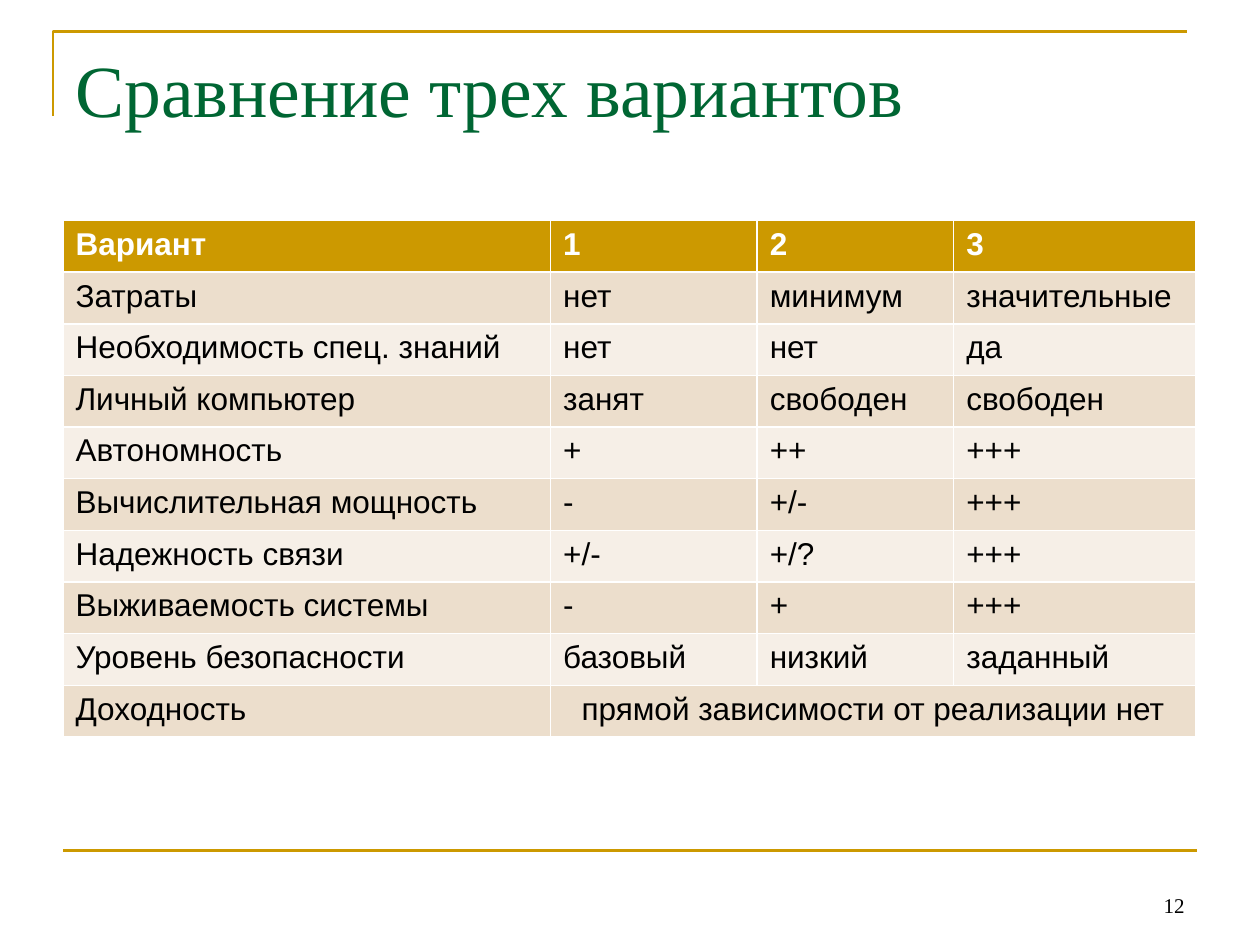
from lxml.etree import SubElement
from pptx import Presentation
from pptx.dml.color import RGBColor
from pptx.enum.shapes import MSO_CONNECTOR
from pptx.enum.text import MSO_ANCHOR, PP_ALIGN
from pptx.oxml.ns import qn
from pptx.util import Inches, Pt

COLORS = {
    "gold": "CC9900",
    "green": "006633",
    "black": "000000",
    "white": "FFFFFF",
    "dark_band": "ECDECC",
    "light_band": "F6EFE7",
}
ROWS = [
    ["Вариант", "1", "2", "3"],
    ["Затраты", "нет", "минимум", "значительные"],
    ["Необходимость спец. знаний", "нет", "нет", "да"],
    ["Личный компьютер", "занят", "свободен", "свободен"],
    ["Автономность", "+", "++", "+++"],
    ["Вычислительная мощность", "-", "+/-", "+++"],
    ["Надежность связи", "+/-", "+/?", "+++"],
    ["Выживаемость системы", "-", "+", "+++"],
    ["Уровень безопасности", "базовый", "низкий", "заданный"],
    ["Доходность", "прямой зависимости от реализации нет"],
]
COLUMN_WIDTHS = [3.87, 1.64, 1.56, 1.92]
ROW_HEIGHT = 0.41


def rgb(name):
    return RGBColor.from_string(COLORS[name])


def write(frame, text, font_name, size, color, bold=False, align=PP_ALIGN.LEFT):
    frame.text = text
    paragraph = frame.paragraphs[0]
    paragraph.alignment = align
    font = paragraph.runs[0].font
    font.name, font.size, font.bold = font_name, Pt(size), bold
    font.color.rgb = rgb(color)


prs = Presentation()
prs.slide_width, prs.slide_height = Inches(10), Inches(7.5)
slide = prs.slides.add_slide(prs.slide_layouts[6])
shapes = slide.shapes

# Corner rule above the title and rule above the footer
builder = shapes.build_freeform(Inches(0.42), Inches(0.92))
builder.add_line_segments(
    [(Inches(0.42), Inches(0.25)), (Inches(9.42), Inches(0.25))], close=False
)
corner_rule = builder.convert_to_shape()
corner_rule.fill.background()
corner_rule.shadow.inherit = False

footer_rule = shapes.add_connector(
    MSO_CONNECTOR.STRAIGHT, Inches(0.5), Inches(6.75), Inches(9.5), Inches(6.75)
)
SubElement(footer_rule._element.spPr, qn("a:effectLst"))
for rule in (corner_rule, footer_rule):
    rule.line.color.rgb = rgb("gold")
    rule.line.width = Pt(1.5)

title = shapes.add_textbox(Inches(0.5), Inches(0.3), Inches(9), Inches(1.25))
title.text_frame.word_wrap = True
write(title.text_frame, "Сравнение трех вариантов", "Times New Roman", 42, "green")

# The default table style supplies the white borders
comparison = shapes.add_table(
    len(ROWS), len(COLUMN_WIDTHS), Inches(0.5), Inches(1.75),
    Inches(sum(COLUMN_WIDTHS)), Inches(ROW_HEIGHT * len(ROWS)),
).table
for column, width in zip(comparison.columns, COLUMN_WIDTHS):
    column.width = Inches(width)

last_row = len(ROWS) - 1
comparison.cell(last_row, 1).merge(comparison.cell(last_row, 3))
for r, values in enumerate(ROWS):
    comparison.rows[r].height = Inches(ROW_HEIGHT)
    header = r == 0
    band = "gold" if header else "dark_band" if r % 2 else "light_band"
    for cell in comparison.rows[r].cells:
        cell.fill.solid()
        cell.fill.fore_color.rgb = rgb(band)
    for c, value in enumerate(values):
        cell = comparison.cell(r, c)
        write(
            cell.text_frame, value, "Arial", 18,
            "white" if header else "black", bold=header,
            align=PP_ALIGN.CENTER if cell.is_merge_origin else PP_ALIGN.LEFT,
        )

page_number = shapes.add_textbox(Inches(7.17), Inches(6.83), Inches(2.33), Inches(0.5))
page_number.text_frame.word_wrap = True
page_number.text_frame.vertical_anchor = MSO_ANCHOR.BOTTOM
write(page_number.text_frame, "12", "Times New Roman", 12, "black", align=PP_ALIGN.RIGHT)

prs.save("out.pptx")
